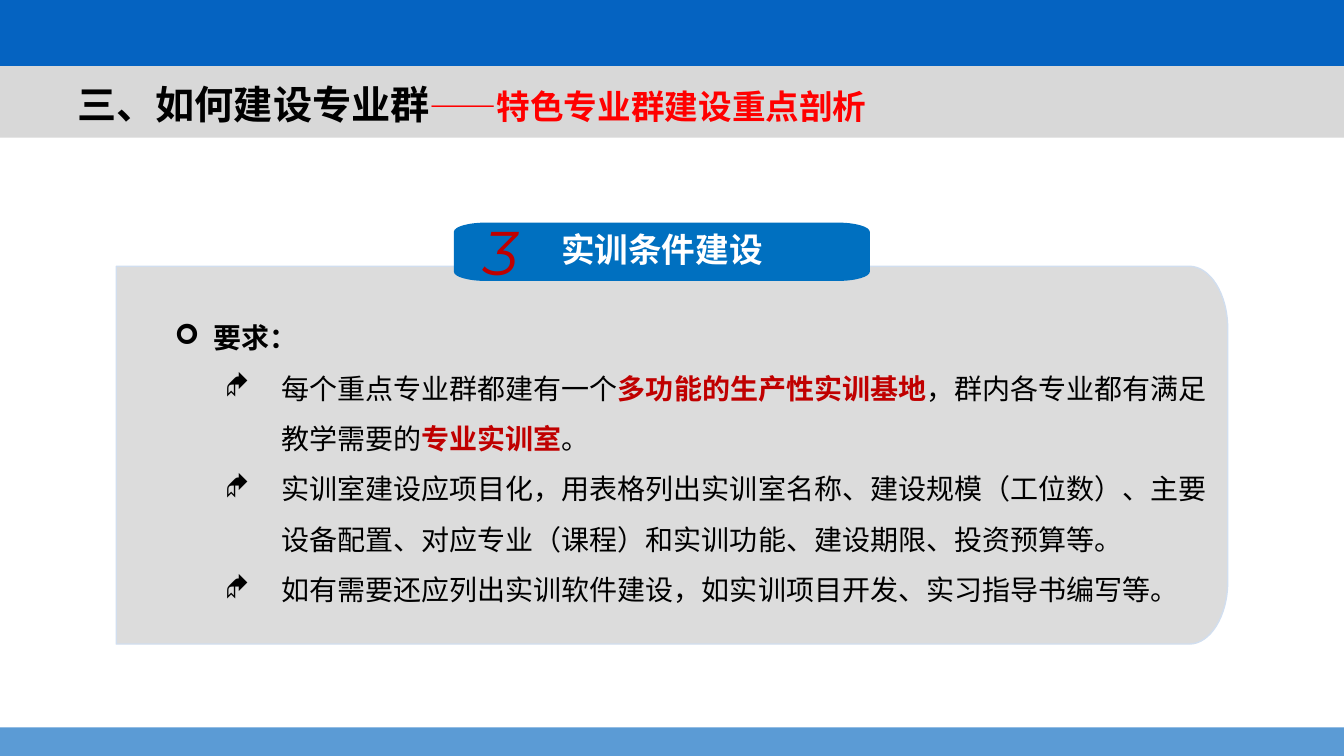
import pptx
import pptx.dml.color
import pptx.enum.shapes
import pptx.enum.text
import pptx.oxml.ns
import pptx.util
from lxml import etree

Cm = pptx.util.Cm
Pt = pptx.util.Pt
RGBColor = pptx.dml.color.RGBColor
Anchor = pptx.enum.text.MSO_ANCHOR
qn = pptx.oxml.ns.qn

BANNER_BLUE = RGBColor(0x05, 0x63, 0xC1)
TAB_BLUE = RGBColor(0x00, 0x70, 0xC0)
FOOTER_BLUE = RGBColor(0x5B, 0x9B, 0xD5)
GREY = RGBColor(0xD8, 0xD8, 0xD8)
PANEL_EDGE = RGBColor(0xD1, 0xDE, 0xEF)
BLACK = RGBColor(0, 0, 0)
WHITE = RGBColor(0xFF, 0xFF, 0xFF)
RED = RGBColor(0xFF, 0, 0)
DARK_RED = RGBColor(0xC0, 0, 0)

HAN_FONT = "Noto Sans CJK SC"
BULLET_FONT = "Wingdings"
SLIDE_WIDTH, SLIDE_HEIGHT = 33.87, 19.05
ARC_PULL = 0.55

HEADING = {"size": Pt(20), "bold": True, "color": BLACK}
PLAIN = {"size": Pt(20), "bold": False, "color": BLACK}
KEY = {"size": Pt(20), "bold": True, "color": DARK_RED}

HEADING_LEVEL = {"level": 1, "margin": 2.24, "hanging": 0.97, "bullet": "➢"}
ITEM_LEVEL = {"level": 3, "margin": 3.96, "hanging": 1.42, "bullet": "◆"}

REQUIREMENTS = [
    (HEADING_LEVEL, [("要求：", HEADING)]),
    (ITEM_LEVEL, [
        ("每个重点专业群都建有一个", PLAIN),
        ("多功能的生产性实训基地", KEY),
        ("，群内各专业都有满足教学需要的", PLAIN),
        ("专业实训室", KEY),
        ("。", PLAIN),
    ]),
    (ITEM_LEVEL, [("实训室建设应项目化，用表格列出实训室名称、建设规模（工位数）、主要"
                   "设备配置、对应专业（课程）和实训功能、建设期限、投资预算等。", PLAIN)]),
    (ITEM_LEVEL, [("如有需要还应列出实训软件建设，如实训项目开发、实习指导书编写等。", PLAIN)]),
]


def add_run(paragraph, text, style):
    """Add a run; style holds font attributes plus its colour."""
    run = paragraph.add_run()
    run.text = text
    for name, value in ({"name": HAN_FONT} | style).items():
        if name == "color":
            run.font.color.rgb = value
        else:
            setattr(run.font, name, value)
    east_asian = etree.SubElement(run.font._element, qn("a:ea"))
    east_asian.set("typeface", run.font.name)


def set_frame(frame, anchor, insets):
    """Set wrapping, anchor and the left, top, right and bottom insets in cm."""
    frame.word_wrap = True
    frame.vertical_anchor = anchor
    for side, inset in zip(("left", "top", "right", "bottom"), insets):
        setattr(frame, f"margin_{side}", Cm(inset))


def paint(shape, color):
    shape.shadow.inherit = False
    shape.fill.solid()
    shape.fill.fore_color.rgb = color
    shape.line.fill.background()


def add_band(slide, top, height, color):
    band = slide.shapes.add_shape(pptx.enum.shapes.MSO_SHAPE.RECTANGLE,
                                  0, Cm(top), Cm(SLIDE_WIDTH), Cm(height))
    paint(band, color)


def bend_corner(line, start, corner, end):
    """Turn a straight path segment into a curve that rounds the corner."""
    curve = etree.Element(qn("a:cubicBezTo"))
    pulled = [[round(p + ARC_PULL * (c - p)) for p, c in zip(point, corner)]
              for point in (start, end)]
    for x, y in (*pulled, end):
        etree.SubElement(curve, qn("a:pt"), x=str(x), y=str(y))
    line.getparent().replace(line, curve)


def add_rounded(slide, left, top, width, height, radii, rounded_left, color):
    """Draw a box with elliptical right corners and, if asked, left ones too."""
    right, bottom = Cm(width), Cm(height)
    radius_x, radius_y = (Cm(radius) for radius in radii)
    corners = [((right, 0), (right - radius_x, 0), (right, radius_y)),
               ((right, bottom), (right, bottom - radius_y), (right - radius_x, bottom)),
               ((0, bottom), (radius_x, bottom), (0, bottom - radius_y)),
               ((0, 0), (0, radius_y), (radius_x, 0))]
    outline, bends = [], []
    for corner, start, end in corners:
        if corner[0] or rounded_left:
            outline += [start, end]
            bends.append((len(outline) - 2, start, corner, end))
        else:
            outline.append(corner)
    builder = slide.shapes.build_freeform(*outline[0])
    builder.add_line_segments(outline[1:], close=True)
    shape = builder.convert_to_shape(Cm(left), Cm(top))
    lines = list(shape._element.iter(qn("a:lnTo")))
    for index, start, corner, end in bends:
        bend_corner(lines[index], start, corner, end)
    paint(shape, color)
    return shape


def add_text(slide, left, top, width, height, runs, line_spacing, top_inset=0.13):
    frame = slide.shapes.add_textbox(Cm(left), Cm(top), Cm(width), Cm(height)).text_frame
    set_frame(frame, Anchor.TOP, (0.25, top_inset, 0.25, 0.13))
    paragraph = frame.paragraphs[0]
    paragraph.line_spacing = line_spacing
    for text, style in runs:
        add_run(paragraph, text, style)


def set_bullet(paragraph, level):
    paragraph.level = level["level"]
    properties = paragraph._p.get_or_add_pPr()
    properties.set("marL", str(Cm(level["margin"])))
    properties.set("indent", str(-Cm(level["hanging"])))
    etree.SubElement(properties, qn("a:buFont"), typeface=BULLET_FONT)
    etree.SubElement(properties, qn("a:buChar"), char=level["bullet"])


def add_requirements_panel(slide):
    panel = add_rounded(slide, 2.93, 6.71, 28.01, 9.52, (0.97, 1.57), False, GREY)
    panel.line.color.rgb = PANEL_EDGE
    panel.line.width = Pt(1)
    fill_color = panel._element.spPr.find(".//" + qn("a:srgbClr"))
    etree.SubElement(fill_color, qn("a:alpha"), val="89000")
    frame = panel.text_frame
    set_frame(frame, Anchor.MIDDLE, (0.2, 0.2, 0.28, 0.2))
    for index, (level, runs) in enumerate(REQUIREMENTS):
        paragraph = frame.add_paragraph() if index else frame.paragraphs[0]
        set_bullet(paragraph, level)
        paragraph.alignment = pptx.enum.text.PP_ALIGN.LEFT
        paragraph.line_spacing = 1.5
        for text, style in runs:
            add_run(paragraph, text, style)


def add_topic_tab(slide):
    tab = add_rounded(slide, 11.44, 5.61, 10.48, 1.47, (0.81, 0.23), True, TAB_BLUE)
    set_frame(tab.text_frame, Anchor.MIDDLE, (0.58, 0.36, 0.58, 0.36))
    paragraph = tab.text_frame.paragraphs[0]
    paragraph.alignment = pptx.enum.text.PP_ALIGN.CENTER
    paragraph.line_spacing = 0.9
    add_run(paragraph, "实训条件建设", {"size": Pt(24), "bold": True, "color": WHITE})


def main():
    presentation = pptx.Presentation()
    presentation.slide_width = Cm(SLIDE_WIDTH)
    presentation.slide_height = Cm(SLIDE_HEIGHT)
    slide = presentation.slides.add_slide(presentation.slide_layouts[6])

    add_requirements_panel(slide)
    add_band(slide, 1.52, 1.95, GREY)
    add_band(slide, 0, 1.66, BANNER_BLUE)
    add_band(slide, 18.33, 0.72, FOOTER_BLUE)
    add_text(slide, 1.7, 1.9, 23.83, 1.2, [
        ("三、如何建设专业群", {"size": Pt(28), "bold": True, "color": BLACK}),
        ("——特色专业群建设重点剖析", {"size": Pt(24), "bold": True, "color": RED}),
    ], 0.9, top_inset=0.25)
    add_topic_tab(slide)
    add_text(slide, 11.94, 5.27, 1.47, 2.13, [
        ("3", {"name": "Montserrat", "size": Pt(44), "italic": True, "color": DARK_RED}),
    ], 1.0)

    presentation.save("out.pptx")


if __name__ == "__main__":
    main()
